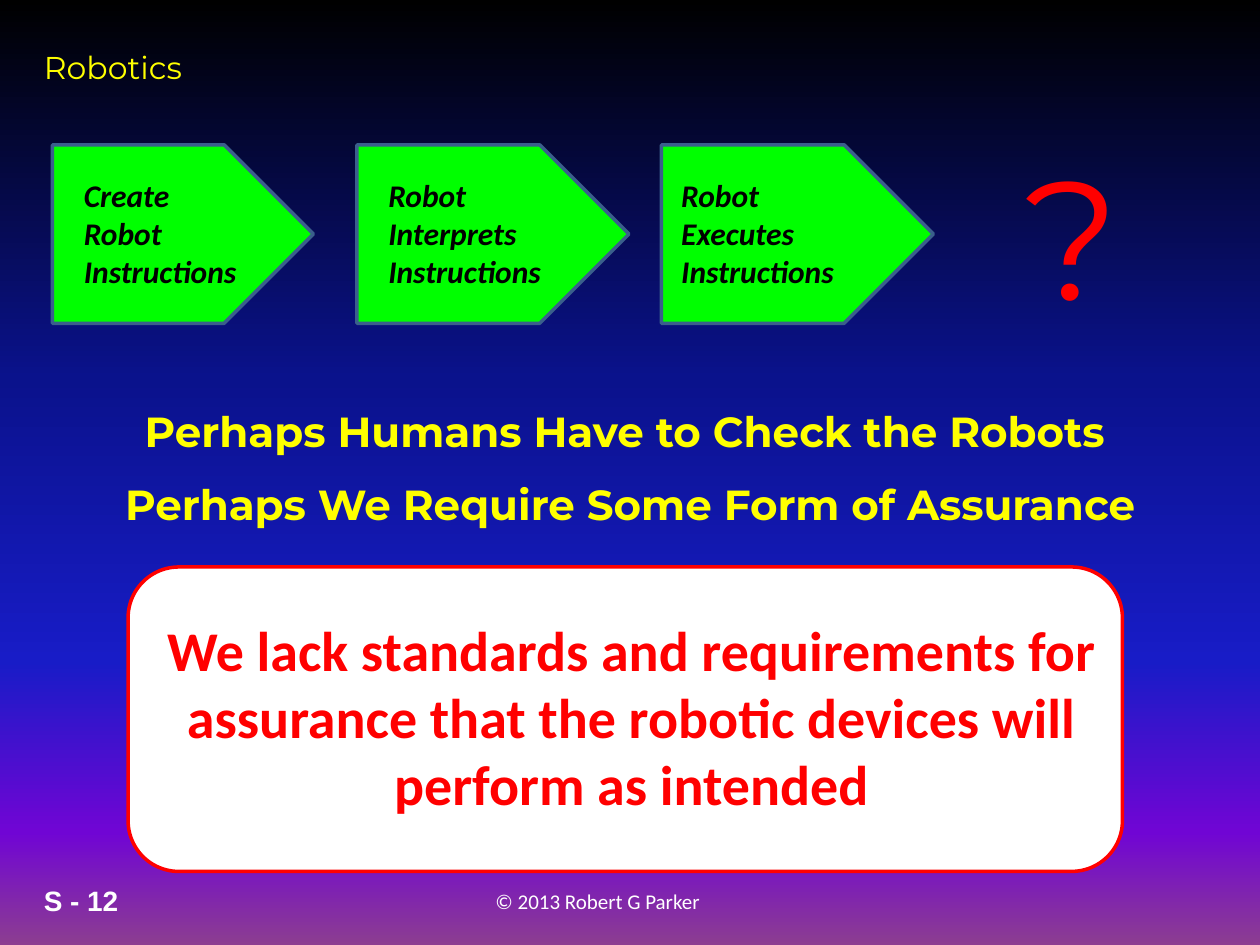
from lxml import etree
from pptx import Presentation
from pptx.dml.color import RGBColor
from pptx.enum import shapes, text
from pptx.oxml import ns
from pptx.util import Inches, Pt


class Theme:
    white, black, red = "FFFFFF", "000000", "FF0000"
    yellow, green, edge = "FFFF00", "00FF00", "3A5F8C"
    sky = [(0, "000000"), (40, "0A128C"), (70, "181CC7"), (88, "7005D4"), (100, "8C3D91")]
    body, head, mark = "Calibri", "Montserrat", "Arial"
    foot, page, base, lead, claim, huge = 12, 16, 18, 24, 32, 96
    line = 2


deck = Presentation()
deck.slide_width, deck.slide_height = Inches(10), Inches(7.5)
cell = deck.slide_width / 120
slide = deck.slides.add_slide(deck.slide_layouts[6])


def shape(home, kind, area, fill, line):
    item = home.add_shape(kind, *[round(n * cell) for n in area])
    item.shadow.inherit = False
    item.fill.solid()
    item.fill.fore_color.rgb = RGBColor.from_string(fill)
    item.line.color.rgb = RGBColor.from_string(line)
    item.line.width = Pt(Theme.line)


def label(home, words, area, size, face, ink, bold=False, slant=False, mid=False):
    frame = home.add_textbox(*[round(n * cell) for n in area]).text_frame
    frame.word_wrap = True
    para = frame.paragraphs[0]
    para.text = words
    para.alignment = text.PP_ALIGN.CENTER if mid else text.PP_ALIGN.LEFT
    font = para.font
    font.size, font.name, font.bold, font.italic = Pt(size), face, bold, slant
    font.color.rgb = RGBColor.from_string(ink)


fill = slide.background.fill
fill.gradient()
fill.gradient_angle = 270
stops = slide.background._cSld.find(".//" + ns.qn("a:gsLst"))
for old in list(stops):
    stops.remove(old)
for pos, tint in Theme.sky:
    stop = etree.SubElement(stops, ns.qn("a:gs"), pos=str(pos * 1000))
    etree.SubElement(stop, ns.qn("a:srgbClr"), val=tint)

top = slide.shapes
label(top, "S - 12", (3, 83.6, 11, 4.4), Theme.page, Theme.mark, Theme.white, bold=True)
label(top, "© 2013 Robert G Parker", (46, 84, 27, 3.6), Theme.foot, Theme.body, Theme.white)
label(top, "Robotics", (3, 4, 20, 4.8), Theme.base, Theme.head, Theme.yellow)

steps = [
    ("Create Robot Instructions", 24.85, 1.8, 17.2),
    ("Robot Interprets Instructions", 25.9, 1.8, 17.8),
    ("Robot Executes Instructions", 25.9, 0.7, 19.7),
]
for i, (words, wide, inset, span) in enumerate(steps):
    left = 5 + 29 * i
    group = top.add_group_shape().shapes
    shape(group, shapes.MSO_SHAPE.PENTAGON, (left, 13.8, wide, 17), Theme.green, Theme.edge)
    label(group, words, (left + inset, 16.2, span, 12.1), Theme.base, Theme.body,
          Theme.black, bold=True, slant=True)

label(top, "?", (96.4, 12, 20.6, 20.6), Theme.huge, Theme.head, Theme.red)

group = top.add_group_shape().shapes
shape(group, shapes.MSO_SHAPE.ROUNDED_RECTANGLE, (12.2, 54, 94.7, 29), Theme.white, Theme.red)
label(group, "We lack standards and requirements for assurance that the robotic devices "
      "will perform as intended", (13.3, 58, 93.7, 20.6), Theme.claim, Theme.body,
      Theme.red, bold=True, mid=True)

for words, area in [
    ("Perhaps Humans Have to Check the Robots", (9, 38, 101, 6)),
    ("Perhaps We Require Some Form of Assurance", (6, 45, 108, 6)),
]:
    label(top, words, area, Theme.lead, Theme.head, Theme.yellow, bold=True, mid=True)

deck.save("out.pptx")
